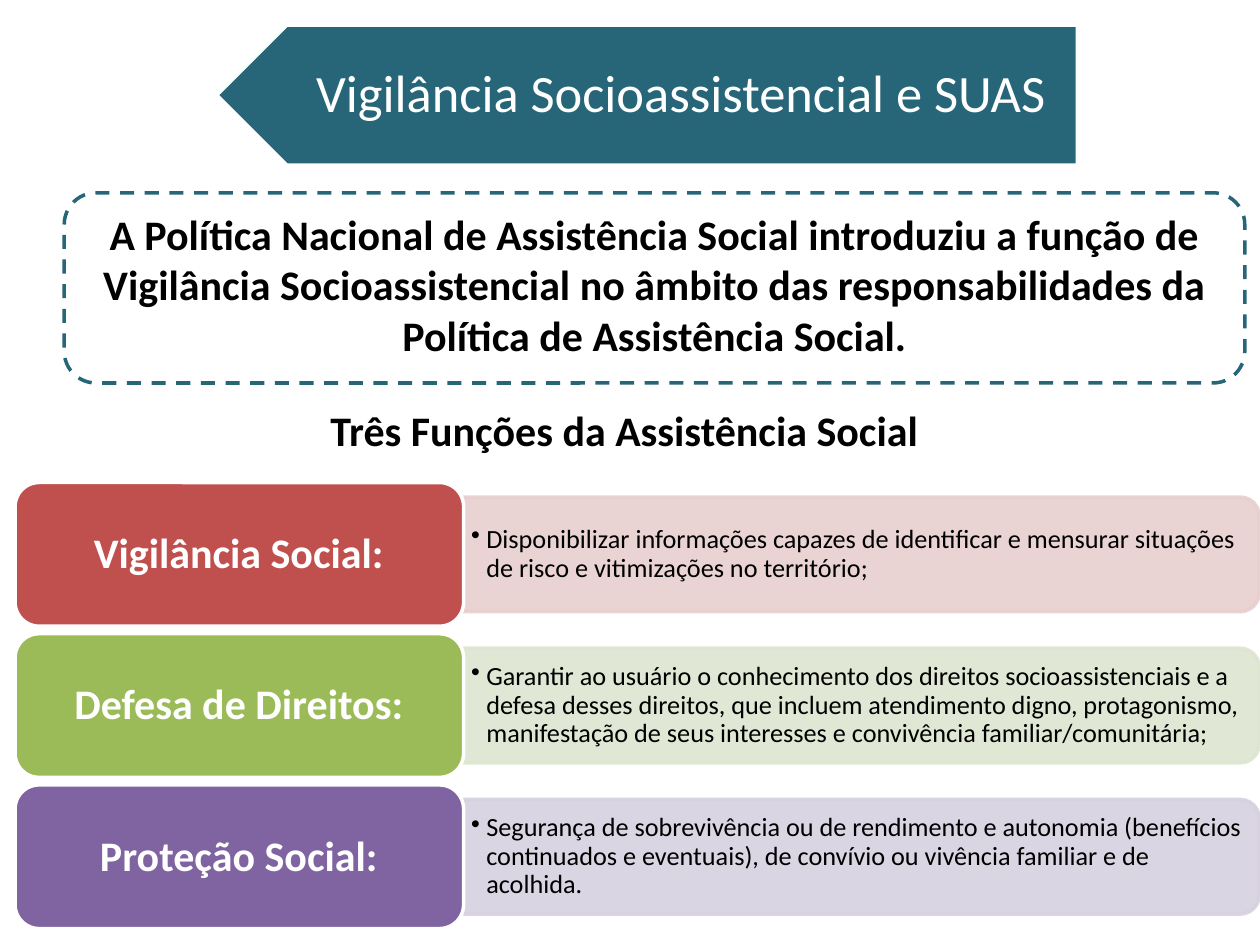
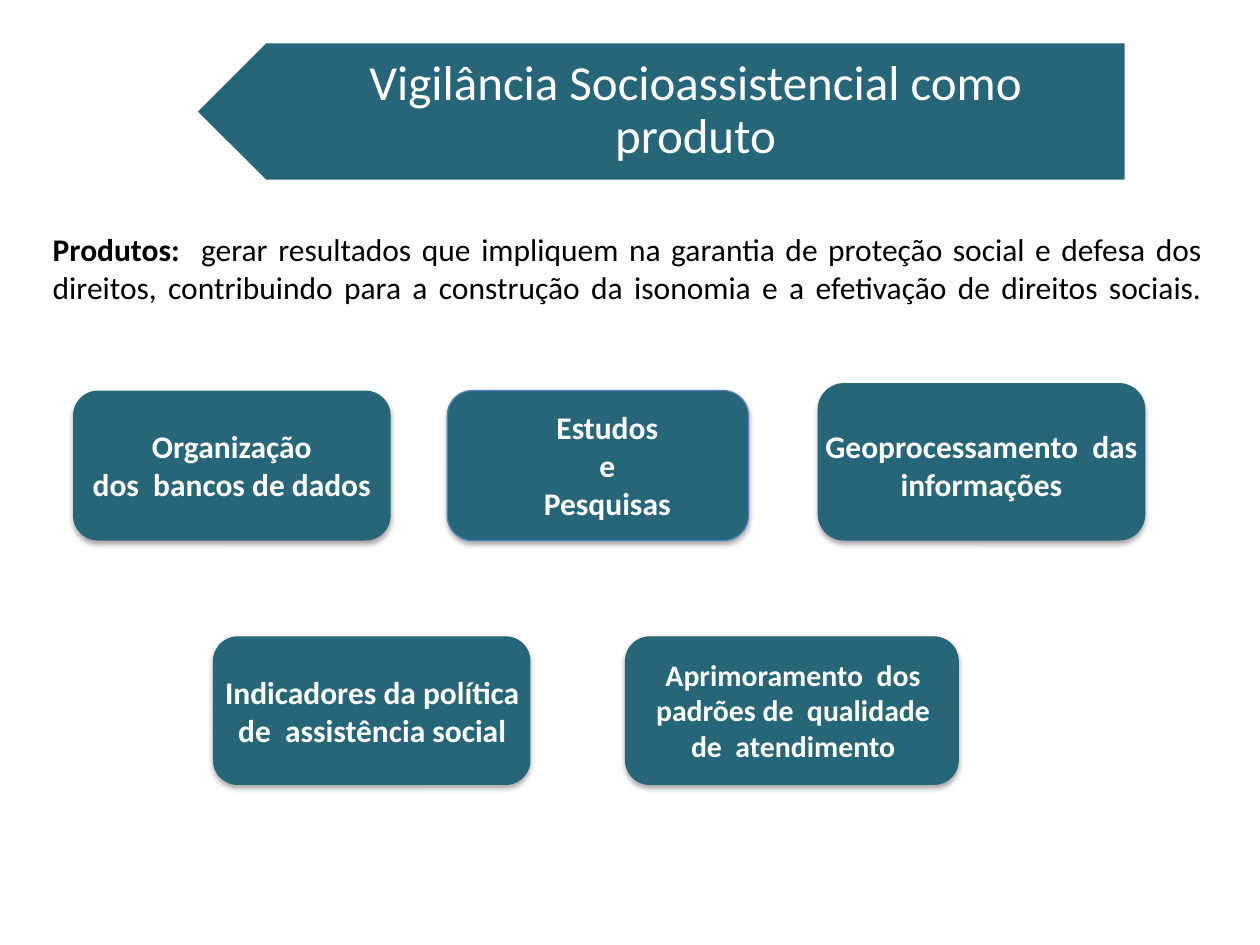
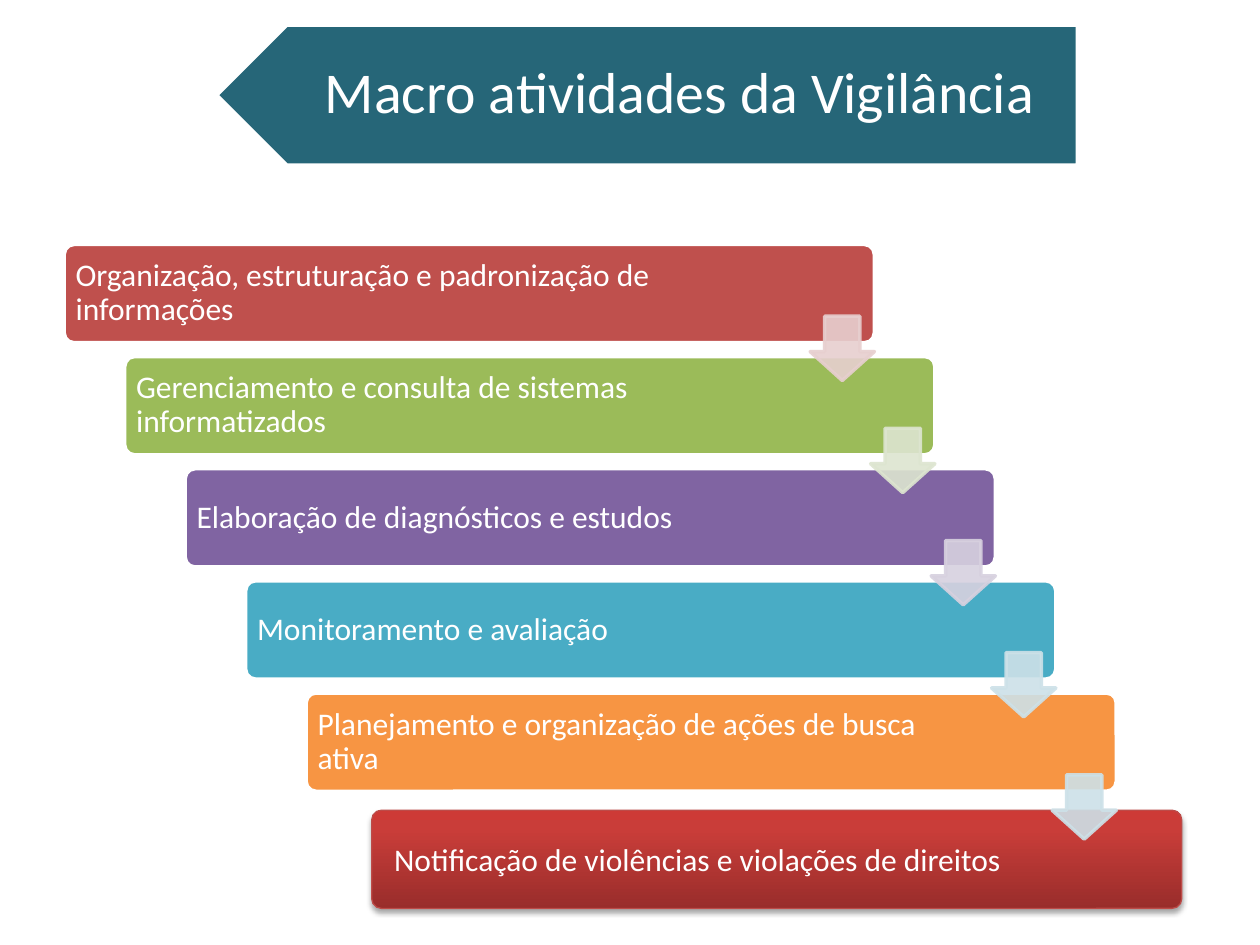
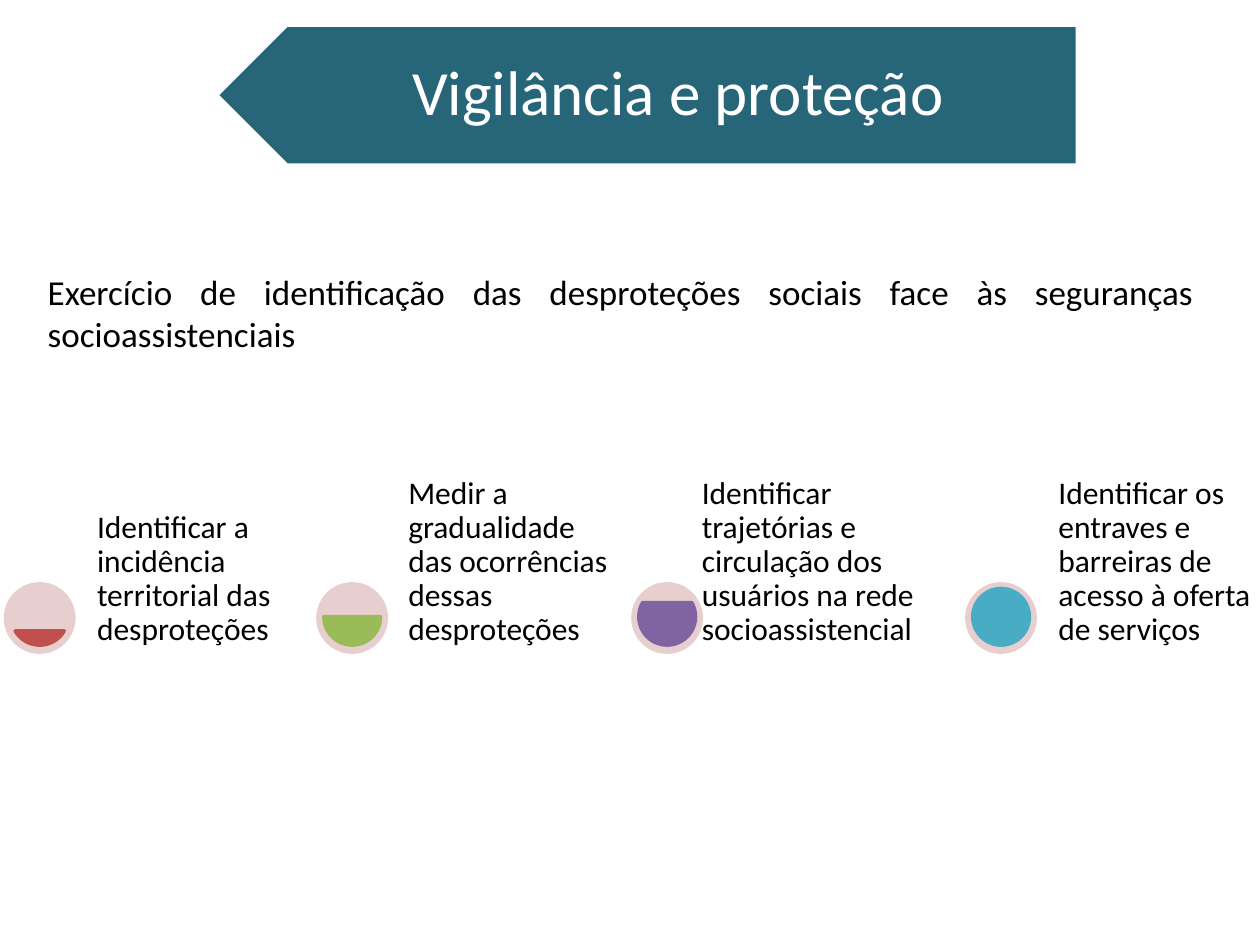
from copy import deepcopy

from lxml.etree import SubElement
from pptx import Presentation
from pptx.dml.color import RGBColor
from pptx.enum.dml import MSO_LINE
from pptx.enum.shapes import MSO_SHAPE as Shape
from pptx.enum.text import MSO_ANCHOR as Anchor, PP_ALIGN as Align
from pptx.oxml.ns import qn
from pptx.util import Emu, Pt

PX = 9144
FONT = "Calibri"
COLORS = {
    "teal": "266678", "white": "FFFFFF", "black": "000000",
    "red": "BF504D", "green": "9BBB59", "purple": "8064A2",
    "aqua": "49ACC5", "orange": "F79543", "blue": "4F81BD",
    "pale red": "E7CFCF", "pale green": "DDE5D0",
    "pale purple": "D7D1DF", "pale aqua": "CDE1E8",
    "dark crimson": "992D2B", "crimson": "C93D39",
    "bright crimson": "CD3A36", "crimson edge": "BD4B48",
}

FUNCTIONS = [
    ("Vigilância Social:", "red",
     "Disponibilizar informações capazes de identificar e mensurar situações "
     "de risco e vitimizações no território;"),
    ("Defesa de Direitos:", "green",
     "Garantir ao usuário o conhecimento dos direitos socioassistenciais e a "
     "defesa desses direitos, que incluem atendimento digno, protagonismo, "
     "manifestação de seus interesses e convivência familiar/comunitária;"),
    ("Proteção Social:", "purple",
     "Segurança de sobrevivência ou de rendimento e autonomia (benefícios "
     "continuados e eventuais), de convívio ou vivência familiar e de acolhida."),
]

PRODUCTS = [
    ((58, 310, 252, 119), (43, 334, 282, 71), 18, None,
     ["Organização", "dos  bancos de dados"]),
    ((355, 310, 239, 119), (371, 319, 222, 101), 18, "blue",
     ["Estudos", "e", "Pesquisas"]),
    ((649, 304, 260, 125), (609, 334, 340, 71), 18, None,
     ["Geoprocessamento  das", "informações"]),
    ((169, 505, 252, 118), (161, 529, 269, 71), 18, None,
     ["Indicadores da política de  assistência social"]),
    ((496, 505, 265, 118), (507, 516, 245, 96), 17, None,
     ["Aprimoramento  dos padrões de  qualidade de  atendimento"]),
]

ACTIVITIES = [
    ("Organização, estruturação e padronização de informações", "red", 549),
    ("Gerenciamento e consulta de sistemas informatizados", "green", 539),
    ("Elaboração de diagnósticos e estudos", "purple", 539),
    ("Monitoramento e avaliação", "aqua", 539),
    ("Planejamento e organização de ações de busca ativa", "orange", 539),
]

GAUGES = [
    (3, 72, 168, "red", (18, 90),
     "Identificar a incidência territorial das desproteções"),
    (251, 319, 169, "green", (0, 108),
     "Medir a gradualidade das ocorrências dessas desproteções"),
    (501, 552, 202, "purple", (198, 126),
     "Identificar trajetórias e circulação dos usuários na rede socioassistencial"),
    (766, 835, 168, "aqua", (162, 162),
     "Identificar os entraves e barreiras de acesso à oferta de serviços"),
]


def rgb(name):
    """Return the named colour."""
    return RGBColor.from_string(COLORS[name])


def emu(box):
    """Turn px lengths into EMU."""
    return [Emu(length * PX) for length in box]


def add_block(slide, kind, box, fill=None, line=None, width=2, adjust=(), rotation=0):
    """Add a preset shape with flat fill and line."""
    shape = slide.shapes.add_shape(kind, *emu(box))
    shape.shadow.inherit = False
    shape.rotation = rotation
    for index, value in enumerate(adjust):
        shape.adjustments[index] = value
    if fill:
        shape.fill.solid()
        shape.fill.fore_color.rgb = rgb(fill)
    else:
        shape.fill.background()
    if line:
        shape.line.color.rgb = rgb(line)
        shape.line.width = Pt(width)
    else:
        shape.line.fill.background()
    return shape


def make_translucent(shape):
    """Give fill and line 90 % opacity."""
    for color in list(shape.element.spPr.iter(qn("a:srgbClr"))):
        SubElement(color, qn("a:alpha"), val="90000")


def add_shadow(shape):
    """Add a soft shadow below the shape."""
    effects = shape.element.spPr.find(qn("a:effectLst"))
    shadow = SubElement(effects, qn("a:outerShdw"), blurRad="40000", dist="23000",
                        dir="5400000", rotWithShape="0")
    color = SubElement(shadow, qn("a:srgbClr"), val=COLORS["black"])
    SubElement(color, qn("a:alpha"), val="35000")


def fill_gradient(shape, stops):
    """Fill the shape upwards through three (position, colour) stops."""
    shape.fill.gradient()
    stop_list = shape.element.spPr.find(".//" + qn("a:gsLst"))
    stop_list.append(deepcopy(stop_list[-1]))
    for stop, (position, color) in zip(shape.fill.gradient_stops, stops):
        stop.position = position
        stop.color.rgb = rgb(color)
    shape.fill.gradient_angle = 90


def add_run(paragraph, text, size, color, bold):
    """Add one formatted run."""
    run = paragraph.add_run()
    run.text = text
    font = run.font
    font.name, font.size, font.bold = FONT, Pt(size), bold
    font.color.rgb = rgb(color)


def write(shape, lines, size, color="black", bold=False, align=Align.LEFT,
          anchor=Anchor.TOP, spacing=None, insets=(10, 5, 10, 5)):
    """Write one paragraph per line into the shape."""
    frame = shape.text_frame
    frame.word_wrap = True
    frame.vertical_anchor = anchor
    (frame.margin_left, frame.margin_top,
     frame.margin_right, frame.margin_bottom) = emu(insets)
    for index, line in enumerate(lines):
        paragraph = frame.add_paragraph() if index else frame.paragraphs[0]
        paragraph.alignment = align
        if spacing:
            paragraph.line_spacing = spacing
        add_run(paragraph, line, size, color, bold)
    return frame.paragraphs[0]


def add_text(slide, box, lines, size, **style):
    """Add a text box and return its first paragraph."""
    return write(slide.shapes.add_textbox(*emu(box)), lines, size, **style)


def add_bullet(paragraph):
    """Turn the paragraph into a hanging bullet item."""
    paragraph.level = 1
    properties = paragraph._p.get_or_add_pPr()
    properties.set("marL", str(12 * PX))
    properties.set("indent", str(-12 * PX))
    color = SubElement(properties, qn("a:buClr"))
    SubElement(color, qn("a:srgbClr"), val=COLORS["black"])
    SubElement(properties, qn("a:buChar"), char="•")


def add_banner(slide, title, size, left=172, top=20, width=683):
    """Add the left-pointing title band."""
    add_block(slide, Shape.PENTAGON, (left, top, width, 111), "teal", "white",
              adjust=[0.5], rotation=180)
    add_text(slide, (left + 28, top, width - 28, 111), [title], size, color="white",
             align=Align.CENTER, anchor=Anchor.MIDDLE, spacing=0.9,
             insets=(49, 12, round(size * 0.77), 12))


def add_function_row(slide, top, label, color, description):
    """Add a coloured label with its pale description panel."""
    panel = add_block(slide, Shape.ROUND_2_SAME_RECTANGLE, (638, top - 259, 91, 632),
                      "pale " + color, "pale " + color, adjust=[0.167, 0], rotation=90)
    make_translucent(panel)
    add_bullet(add_text(slide, (368, top + 16, 628, 82), [description], 15,
                        anchor=Anchor.MIDDLE, spacing=0.9, insets=(6, 3, 6, 3)))
    add_block(slide, Shape.ROUNDED_RECTANGLE, (12, top, 356, 114), color, "white",
              adjust=[0.167])
    add_text(slide, (17, top + 6, 345, 103), [label], 24, color="white", bold=True,
             align=Align.CENTER, anchor=Anchor.MIDDLE, spacing=0.9)


def add_product(slide, box, text_box, size, line, lines):
    """Add a shadowed product card."""
    card = add_block(slide, Shape.ROUNDED_RECTANGLE, box, "teal", line, 0.75, [0.167])
    add_shadow(card)
    add_text(slide, text_box, lines, size, color="white", bold=True, align=Align.CENTER)


def add_step_arrow(slide, left, top, color):
    """Add a translucent arrow to the next step."""
    make_translucent(add_block(slide, Shape.DOWN_ARROW, (left, top, 51, 51),
                               color, color, adjust=[0.55, 0.45]))


def add_gauge(slide, left, text_left, text_width, color, angles, text):
    """Add a partly filled circle with its text."""
    add_block(slide, Shape.OVAL, (left, 462, 57, 57), "pale red")
    add_block(slide, Shape.CHORD, (left + 6, 467, 45, 45), color, color, adjust=angles)
    add_text(slide, (text_left, 462, text_width, 57), [text], 18,
             anchor=Anchor.BOTTOM, spacing=0.9, insets=(5, 5, 5, 5))


def build_functions(slide):
    """Build the slide on the three functions."""
    add_banner(slide, "Vigilância Socioassistencial e SUAS", 30)
    statement = add_block(slide, Shape.ROUNDED_RECTANGLE, (51, 153, 937, 151),
                          line="teal", adjust=[0.167])
    statement.line.dash_style = MSO_LINE.DASH
    write(statement, ["A Política Nacional de Assistência Social introduziu a função de "
                      "Vigilância Socioassistencial no âmbito das responsabilidades da "
                      "Política de Assistência Social."],
          24, bold=True, align=Align.CENTER)
    add_text(slide, (20, 316, 951, 91), ["Três Funções da Assistência Social"], 24,
             bold=True, align=Align.CENTER)
    for index, function in enumerate(FUNCTIONS):
        add_function_row(slide, 383 + 120 * index, *function)


def build_products(slide):
    """Build the slide on the products."""
    paragraph = add_text(slide, (32, 178, 932, 507), ["Produtos:"], 18, bold=True,
                         align=Align.JUSTIFY)
    add_run(paragraph, "  gerar resultados que impliquem na garantia de proteção social e "
            "defesa dos direitos, contribuindo para a construção da isonomia e a "
            "efetivação de direitos sociais.", 18, "black", False)
    paragraph.add_line_break()
    for product in PRODUCTS:
        add_product(slide, *product)
    add_banner(slide, "Vigilância Socioassistencial como produto", 28, 155, 33, 739)


def build_activities(slide):
    """Build the staircase of activities."""
    add_banner(slide, "Macro atividades da Vigilância", 33)
    for index, (text, color, text_width) in enumerate(ACTIVITIES):
        left, top = 51 + 48 * index, 194 + 89 * index
        add_block(slide, Shape.ROUNDED_RECTANGLE, (left, top, 643, 78), color, "white",
                  adjust=[0.1])
        add_text(slide, (left + 2, top + 2, text_width, 74), [text], 18, color="white",
                 anchor=Anchor.MIDDLE, spacing=0.9, insets=(7, 7, 7, 7))
    for index, (_, color, _) in enumerate(ACTIVITIES[:-1]):
        add_step_arrow(slide, 643 + 48 * index, 251 + 89 * index, "pale " + color)
    last_step = add_block(slide, Shape.ROUNDED_RECTANGLE, (295, 643, 643, 78),
                          line="crimson edge", width=0.75, adjust=[0.1])
    fill_gradient(last_step, [(0, "dark crimson"), (0.8, "crimson"), (1, "bright crimson")])
    add_shadow(last_step)
    add_text(slide, (303, 662, 583, 40),
             ["Notificação de violências e violações de direitos"], 18, color="white")
    add_step_arrow(slide, 835, 615, "pale aqua")


def build_protection(slide):
    """Build the slide on surveillance and protection."""
    add_banner(slide, "Vigilância e proteção", 36)
    add_text(slide, (28, 210, 929, 77),
             ["Exercício de identificação das desproteções sociais face às seguranças "
              "socioassistenciais"], 20, align=Align.JUSTIFY)
    for gauge in GAUGES:
        add_gauge(slide, *gauge)


def main():
    """Build and save the presentation."""
    presentation = Presentation()
    presentation.slide_width, presentation.slide_height = emu((1000, 750))
    blank = presentation.slide_layouts[6]
    for build in (build_functions, build_products, build_activities, build_protection):
        build(presentation.slides.add_slide(blank))
    presentation.save("out.pptx")


if __name__ == "__main__":
    main()
